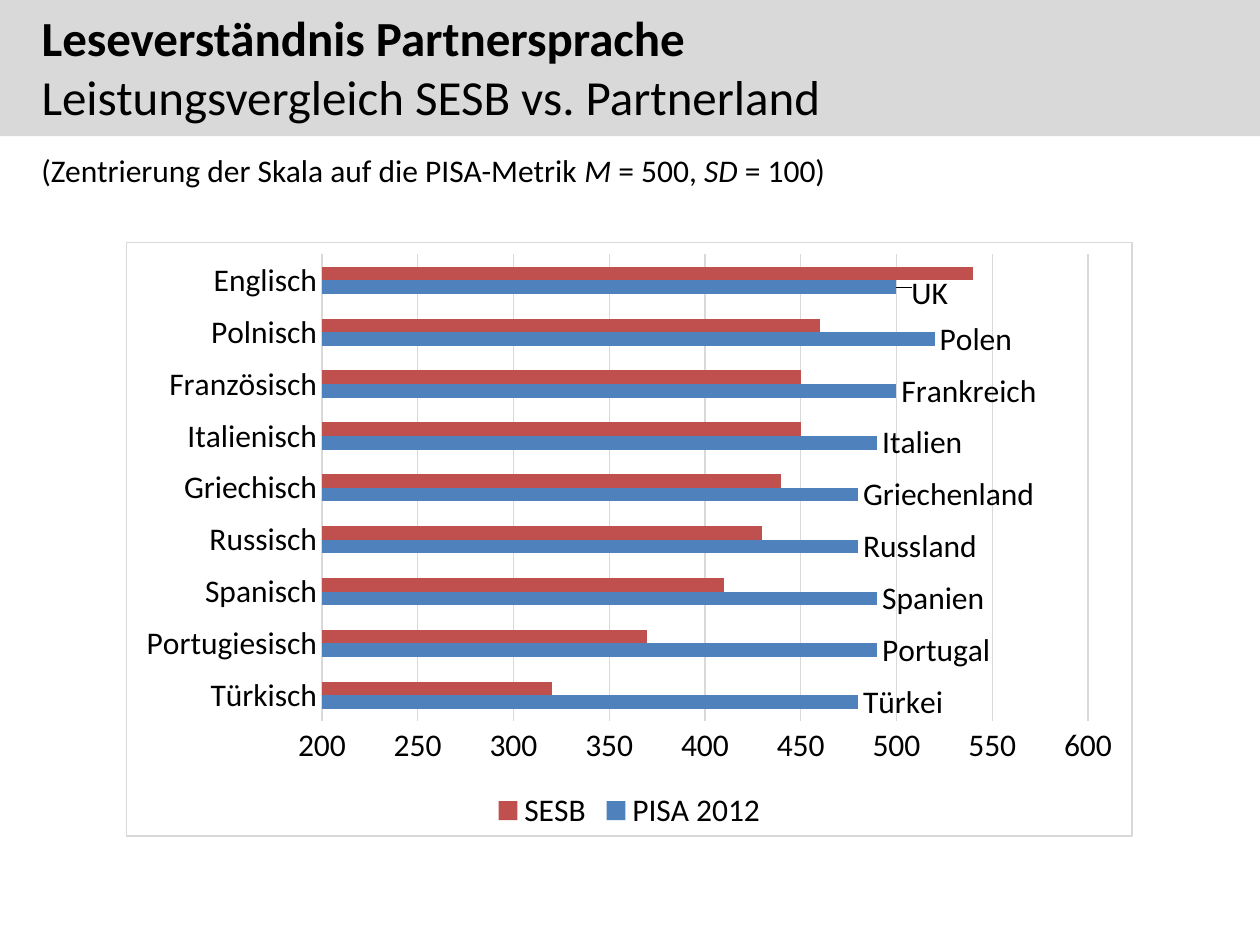
from lxml import etree
from pptx import Presentation
from pptx import util as u
from pptx.chart.data import CategoryChartData
from pptx.dml.color import RGBColor
from pptx.enum import chart as ce
from pptx.enum import text
from pptx.oxml import parse_xml
from pptx.oxml.ns import qn

FONT = "Calibri"
BLACK, GREY, WHITE = "000000", "D9D9D9", "FFFFFF"
BLUE, RED = "4F81BD", "C0504D"

# language, partner country, PISA 2012, SESB (bottom to top)
RESULTS = [
    ("Türkisch", "Türkei", 480, 320),
    ("Portugiesisch", "Portugal", 490, 370),
    ("Spanisch", "Spanien", 490, 410),
    ("Russisch", "Russland", 480, 430),
    ("Griechisch", "Griechenland", 480, 440),
    ("Italienisch", "Italien", 490, 450),
    ("Französisch", "Frankreich", 500, 450),
    ("Polnisch", "Polen", 520, 460),
    ("Englisch", "UK", 500, 540),
]


def color(value):
    return RGBColor.from_string(value)


def set_font(font, size, bold=None):
    font.name = FONT
    font.size = u.Pt(size)
    font.bold = bold
    font.color.rgb = color(BLACK)


def set_line(line):
    line.color.rgb = color(GREY)
    line.width = u.Pt(0.75)


def add_title(slide, lines):
    title = slide.shapes.title
    title.left, title.top = u.Inches(-0.02), u.Inches(-0.02)
    title.width, title.height = u.Inches(10.02), u.Inches(1.1)
    title.fill.solid()
    title.fill.fore_color.rgb = color(GREY)
    frame = title.text_frame
    frame.text = "\n".join(lines)
    frame.auto_size = text.MSO_AUTO_SIZE.NONE
    frame.word_wrap = True
    frame.vertical_anchor = text.MSO_ANCHOR.MIDDLE
    for index, paragraph in enumerate(frame.paragraphs):
        paragraph.alignment = text.PP_ALIGN.LEFT
        properties = paragraph._p.get_or_add_pPr()
        properties.set("marL", str(u.Inches(0.25)))
        properties.set("indent", "0")
        set_font(paragraph.font, 28, bold=index == 0)


def add_note(slide, parts):
    box = slide.shapes.add_textbox(
        u.Inches(0.23), u.Inches(1.15), u.Inches(9.31), u.Inches(0.4))
    box.text_frame.word_wrap = True
    paragraph = box.text_frame.paragraphs[0]
    set_font(paragraph.font, 18)
    for words, italic in parts:
        run = paragraph.add_run()
        run.text = words
        run.font.italic = italic


def frame_chart(chart):
    """White chart area with a thin grey border."""
    namespace = "http://schemas.openxmlformats.org/drawingml/2006/"
    area = parse_xml(
        f'<c:spPr xmlns:c="{namespace}chart" xmlns:a="{namespace}main">'
        f'<a:solidFill><a:srgbClr val="{WHITE}"/></a:solidFill>'
        f'<a:ln w="{u.Pt(0.75)}"><a:solidFill><a:srgbClr val="{GREY}"/>'
        '</a:solidFill></a:ln></c:spPr>')
    chart._chartSpace.find(qn("c:chart")).addnext(area)


def shift_label(series, index, x, y):
    """Move one data label by fractions of the chart size."""
    for label in series._element.iter(qn("c:dLbl")):
        number = label.find(qn("c:idx"))
        if number.get("val") == str(index):
            layout = etree.Element(qn("c:layout"))
            manual = etree.SubElement(layout, qn("c:manualLayout"))
            etree.SubElement(manual, qn("c:x")).set("val", str(x))
            etree.SubElement(manual, qn("c:y")).set("val", str(y))
            number.addnext(layout)


def label_points(series, names):
    for index, name in enumerate(names):
        label = series.points[index].data_label
        label.text_frame.text = name
        set_font(label.text_frame.paragraphs[0].font, 18)
        label.position = ce.XL_LABEL_POSITION.OUTSIDE_END


def style_axes(chart):
    for axis in (chart.category_axis, chart.value_axis):
        axis.major_tick_mark = axis.minor_tick_mark = ce.XL_TICK_MARK.NONE
        set_font(axis.tick_labels.font, 18)
    set_line(chart.category_axis.format.line)
    values = chart.value_axis
    values.minimum_scale, values.maximum_scale = 200, 600
    values.major_unit = 50
    values.format.line.fill.background()
    values.has_major_gridlines = True
    set_line(values.major_gridlines.format.line)


def add_results_chart(slide):
    languages, countries, pisa, sesb = zip(*RESULTS)
    data = CategoryChartData(number_format="0")
    data.categories = languages
    data.add_series("PISA 2012", pisa)
    data.add_series("SESB", sesb)
    chart = slide.shapes.add_chart(
        ce.XL_CHART_TYPE.BAR_CLUSTERED, u.Inches(1), u.Inches(1.92),
        u.Inches(7.99), u.Inches(4.72), data).chart
    set_font(chart.font, 10)
    chart.has_title = False
    frame_chart(chart)
    style_axes(chart)

    # Bars and country names
    plot = chart.plots[0]
    plot.gap_width = 182
    plot.vary_by_categories = False
    for series, fill in zip(plot.series, (BLUE, RED)):
        series.format.fill.solid()
        series.format.fill.fore_color.rgb = color(fill)
    label_points(plot.series[0], countries)
    shift_label(plot.series[0], countries.index("UK"), 0.01, 0.01)

    # Legend
    chart.has_legend = True
    chart.legend.position = ce.XL_LEGEND_POSITION.BOTTOM
    chart.legend.include_in_layout = False
    set_font(chart.legend.font, 18)


def main():
    presentation = Presentation()
    presentation.slide_width = u.Inches(10)
    presentation.slide_height = u.Inches(7.5)
    slide = presentation.slides.add_slide(presentation.slide_layouts[5])
    add_title(slide, ["Leseverständnis Partnersprache",
                      "Leistungsvergleich SESB vs. Partnerland"])
    add_results_chart(slide)
    add_note(slide, [("(Zentrierung der Skala auf die PISA-Metrik ", False),
                     ("M", True), (" = 500, ", False),
                     ("SD", True), (" = 100)", False)])
    presentation.save("out.pptx")


if __name__ == "__main__":
    main()
